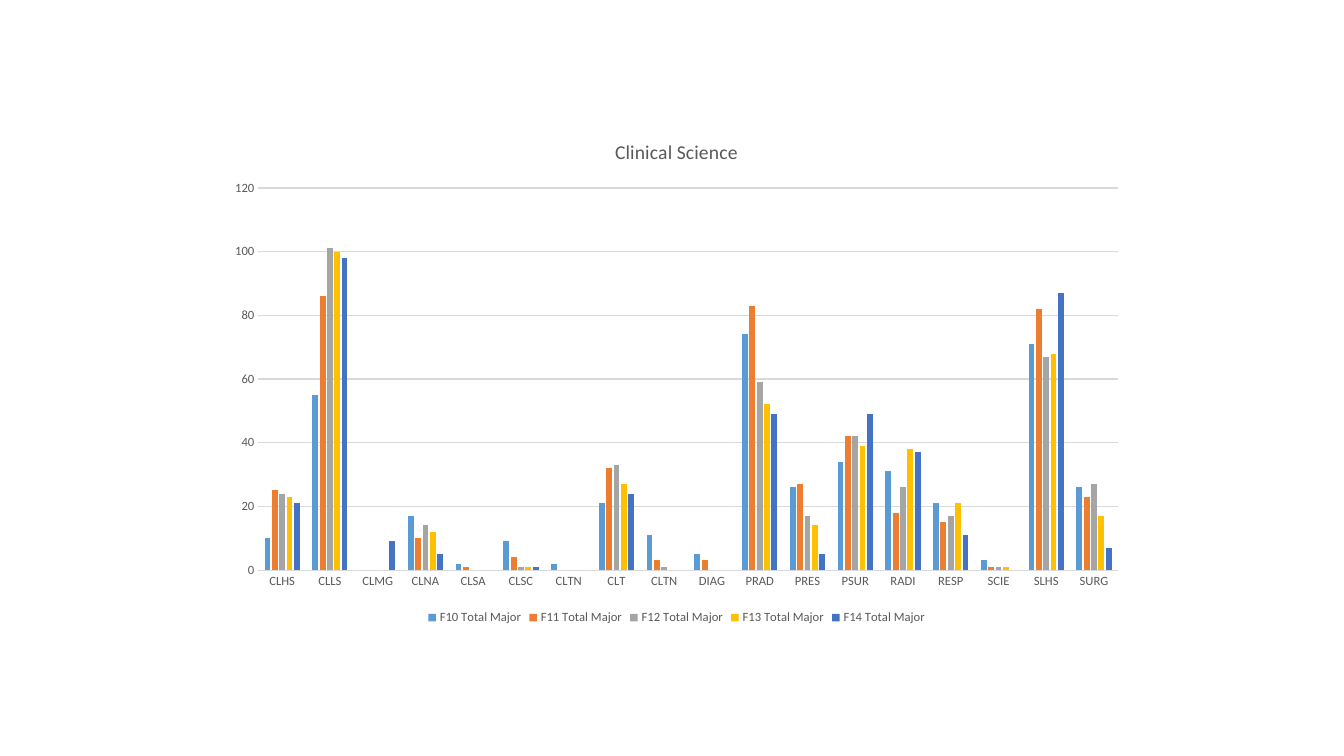
from pptx import Presentation
from pptx.chart.data import CategoryChartData
from pptx.dml.color import RGBColor
from pptx.enum.chart import XL_CHART_TYPE as ChartType
from pptx.enum.chart import XL_LEGEND_POSITION as LegendPos
from pptx.enum.chart import XL_TICK_MARK as TickMark
from pptx.util import Inches, Pt

# Colours and font
TEXT_GREY = RGBColor(0x59, 0x59, 0x59)
LINE_GREY = RGBColor(0xD9, 0xD9, 0xD9)
BLUE = RGBColor(0x5B, 0x9B, 0xD5)
ORANGE = RGBColor(0xED, 0x7D, 0x31)
GREY = RGBColor(0xA5, 0xA5, 0xA5)
GOLD = RGBColor(0xFF, 0xC0, 0x00)
NAVY = RGBColor(0x44, 0x72, 0xC4)
FONT = "Calibri"

# Majors per programme, one series per fall term
PROGRAMMES = ["CLHS", "CLLS", "CLMG", "CLNA", "CLSA", "CLSC", "CLTN", "CLT", "CLTN",
              "DIAG", "PRAD", "PRES", "PSUR", "RADI", "RESP", "SCIE", "SLHS", "SURG"]
TERMS = [
    ("F10", BLUE, [10, 55, None, 17, 2, 9, 2, 21, 11,
                   5, 74, 26, 34, 31, 21, 3, 71, 26]),
    ("F11", ORANGE, [25, 86, None, 10, 1, 4, None, 32, 3,
                     3, 83, 27, 42, 18, 15, 1, 82, 23]),
    ("F12", GREY, [24, 101, None, 14, None, 1, None, 33, 1,
                   None, 59, 17, 42, 26, 17, 1, 67, 27]),
    ("F13", GOLD, [23, 100, None, 12, None, 1, None, 27, None,
                   None, 52, 14, 39, 38, 21, 1, 68, 17]),
    ("F14", NAVY, [21, 98, 9, 5, None, 1, None, 24, None,
                   None, 49, 5, 49, 37, 11, None, 87, 7]),
]


def set_font(font, size):
    font.name, font.size, font.bold = FONT, Pt(size), False
    font.color.rgb = TEXT_GREY


def set_line(line):
    line.color.rgb = LINE_GREY
    line.width = Pt(0.75)


def add_columns(s, left, top, width, height):
    data = CategoryChartData(number_format="#,##0")
    data.categories = PROGRAMMES
    for term, _, majors in TERMS:
        data.add_series(f"{term} Total Major", majors)
    chart = s.shapes.add_chart(ChartType.COLUMN_CLUSTERED, left, top, width, height, data).chart
    set_font(chart.font, 10)

    plot = chart.plots[0]
    plot.gap_width, plot.overlap, plot.vary_by_categories = 219, -27, False
    for series, (_, colour, _) in zip(plot.series, TERMS):
        series.format.fill.solid()
        series.format.fill.fore_color.rgb = colour
    return chart


def add_title(chart, text):
    chart.has_title = True
    chart.chart_title.include_in_layout = False
    p = chart.chart_title.text_frame.paragraphs[0]
    p.text = text
    set_font(p.font, 14)


def format_axes(chart):
    for axis in (chart.category_axis, chart.value_axis):
        axis.major_tick_mark = axis.minor_tick_mark = TickMark.NONE
        set_font(axis.tick_labels.font, 9)
    set_line(chart.category_axis.format.line)

    values = chart.value_axis
    values.minimum_scale, values.maximum_scale, values.major_unit = 0, 120, 20
    values.format.line.fill.background()
    values.has_major_gridlines = True
    set_line(values.major_gridlines.format.line)
    values.tick_labels.number_format = "#,##0"
    values.tick_labels.number_format_is_linked = False


def add_legend(chart):
    chart.has_legend = True
    chart.legend.position = LegendPos.BOTTOM
    chart.legend.include_in_layout = False
    set_font(chart.legend.font, 9)


def main():
    prs = Presentation()
    prs.slide_width, prs.slide_height = Inches(13.33), Inches(7.5)
    s = prs.slides.add_slide(prs.slide_layouts[6])

    # Clustered columns, with title, axes and legend
    chart = add_columns(s, Inches(2.15), Inches(1.18), Inches(9.12), Inches(5.06))
    add_title(chart, "Clinical Science")
    format_axes(chart)
    add_legend(chart)
    prs.save("out.pptx")


if __name__ == "__main__":
    main()
